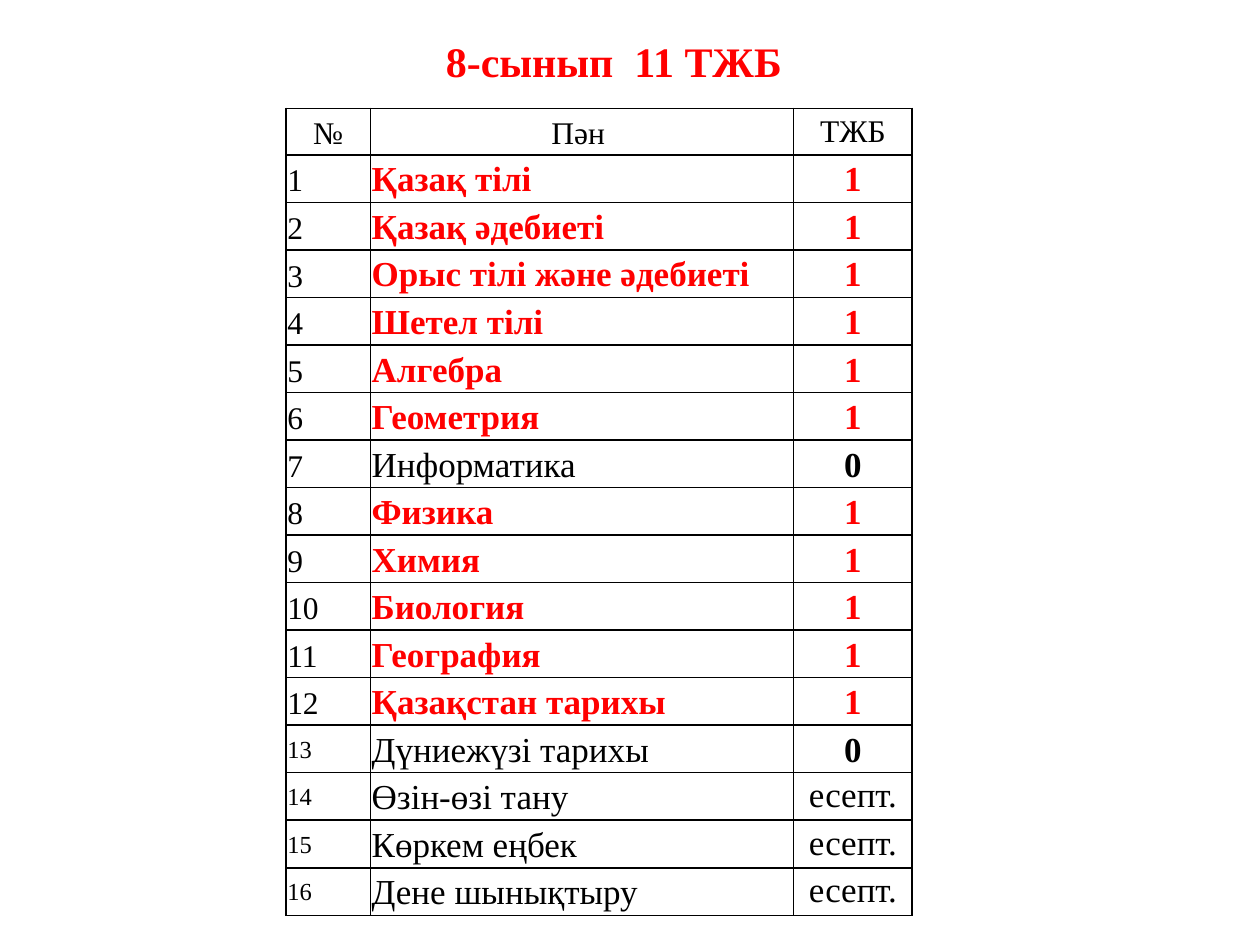
from lxml.etree import SubElement
from pptx import Presentation
from pptx.dml.color import RGBColor
from pptx.enum.text import MSO_ANCHOR, MSO_AUTO_SIZE, PP_ALIGN
from pptx.oxml.ns import qn
from pptx.util import Inches, Pt

TITLE = "8-сынып  11 ТЖБ"
HEADER = ["№", "Пән ", "ТЖБ"]
SUBJECTS = [
    ("Қазақ тілі", "1"),
    ("Қазақ әдебиеті", "1"),
    ("Орыс тілі және әдебиеті", "1"),
    ("Шетел тілі", "1"),
    ("Алгебра", "1"),
    ("Геометрия", "1"),
    ("Информатика", "0"),
    ("Физика", "1"),
    ("Химия", "1"),
    ("Биология", "1"),
    ("География", "1"),
    ("Қазақстан тарихы", "1"),
    ("Дүниежүзі тарихы", "0"),
    ("Өзін-өзі тану", "есепт."),
    ("Көркем еңбек", "есепт."),
    ("Дене шынықтыру", "есепт."),
]
COLORS = {"accent": "FF0000", "text": "000000", "border": "000000"}
FONT = "Times New Roman"
COLUMN_WIDTHS = [0.67, 3.36, 0.94]
TABLE_HEIGHT = 6.41
HEADER_HEIGHT = 0.37
LAST_LARGE_NUMBER = 12


def add_run(paragraph, text, size, color="text", bold=False):
    run = paragraph.add_run()
    run.text = text
    run.font.name = FONT
    run.font.size = Pt(size)
    run.font.bold = bold
    run.font.color.rgb = RGBColor.from_string(COLORS[color])


def add_borders(cell):
    properties = cell._tc.get_or_add_tcPr()
    for side in ("a:lnL", "a:lnR", "a:lnT", "a:lnB"):
        line = SubElement(properties, qn(side), w=str(Pt(1)))
        fill = SubElement(line, qn("a:solidFill"))
        SubElement(fill, qn("a:srgbClr"), val=COLORS["border"])


def fill_cell(cell, text, size, align, spacing, after=0, top=False, **style):
    cell.margin_left = cell.margin_right = Inches(0.01)
    cell.margin_top = cell.margin_bottom = Inches(0.01)
    cell.vertical_anchor = MSO_ANCHOR.TOP if top else MSO_ANCHOR.MIDDLE
    add_borders(cell)
    cell.fill.background()
    paragraph = cell.text_frame.paragraphs[0]
    paragraph.alignment = align
    paragraph.line_spacing = spacing
    paragraph.space_after = Pt(after)
    add_run(paragraph, text, size, **style)


def add_title(slide):
    box = slide.shapes.add_textbox(Inches(3.44), Inches(0.23), Inches(2.98), Inches(0.5))
    frame = box.text_frame
    frame.word_wrap = False
    frame.auto_size = MSO_AUTO_SIZE.SHAPE_TO_FIT_TEXT
    add_run(frame.paragraphs[0], TITLE, 24, "accent", True)


def add_subject_table(slide):
    frame = slide.shapes.add_table(
        len(SUBJECTS) + 1, len(HEADER), Inches(2.27), Inches(0.86),
        Inches(sum(COLUMN_WIDTHS)), Inches(TABLE_HEIGHT))
    table = frame.table
    table.first_row = table.horz_banding = False
    for column, width in zip(table.columns, COLUMN_WIDTHS):
        column.width = Inches(width)
    row_height = (TABLE_HEIGHT - HEADER_HEIGHT) / len(SUBJECTS)
    for index, row in enumerate(table.rows):
        row.height = Inches(row_height if index else HEADER_HEIGHT)

    for column, text in enumerate(HEADER):
        fill_cell(table.cell(0, column), text, 18, PP_ALIGN.CENTER, 1.15, 1,
                  top=column == 2)
    for number, (subject, count) in enumerate(SUBJECTS, 1):
        large = number <= LAST_LARGE_NUMBER
        assessed = count == "1"
        credit = not count.isdigit()
        color = "accent" if assessed else "text"
        fill_cell(table.cell(number, 0), str(number), 18 if large else 14,
                  PP_ALIGN.JUSTIFY, 1.15 if large else 1.07, 1 if large else 0)
        fill_cell(table.cell(number, 1), subject, 20, PP_ALIGN.JUSTIFY, 1.07,
                  color=color, bold=assessed)
        fill_cell(table.cell(number, 2), count, 20, PP_ALIGN.CENTER, 1.07,
                  8 if credit else 0, top=credit, color=color, bold=not credit)


def main():
    presentation = Presentation()
    presentation.slide_width = Inches(10)
    presentation.slide_height = Inches(7.5)
    slide = presentation.slides.add_slide(presentation.slide_layouts[6])
    add_title(slide)
    add_subject_table(slide)
    presentation.save("out.pptx")


if __name__ == "__main__":
    main()
